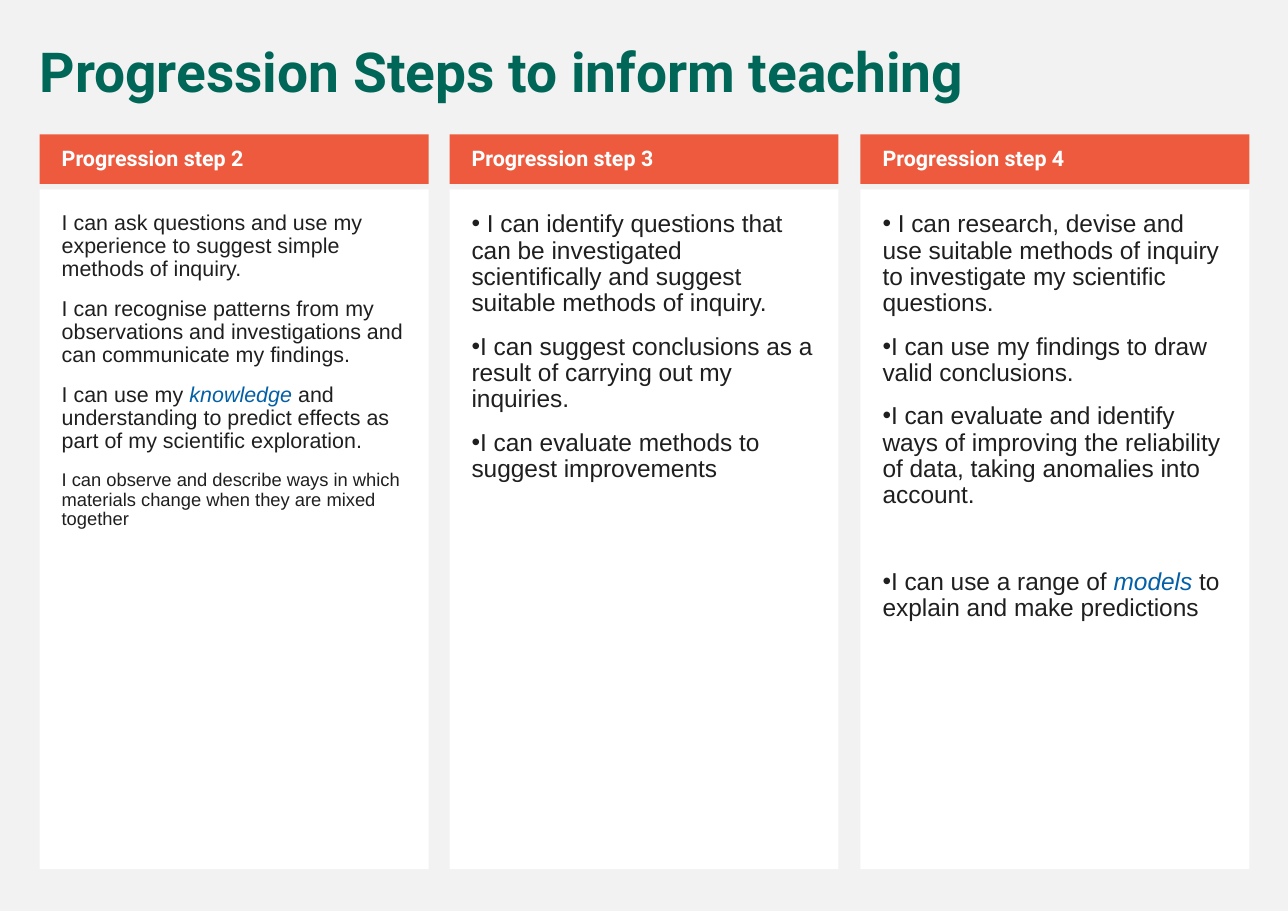
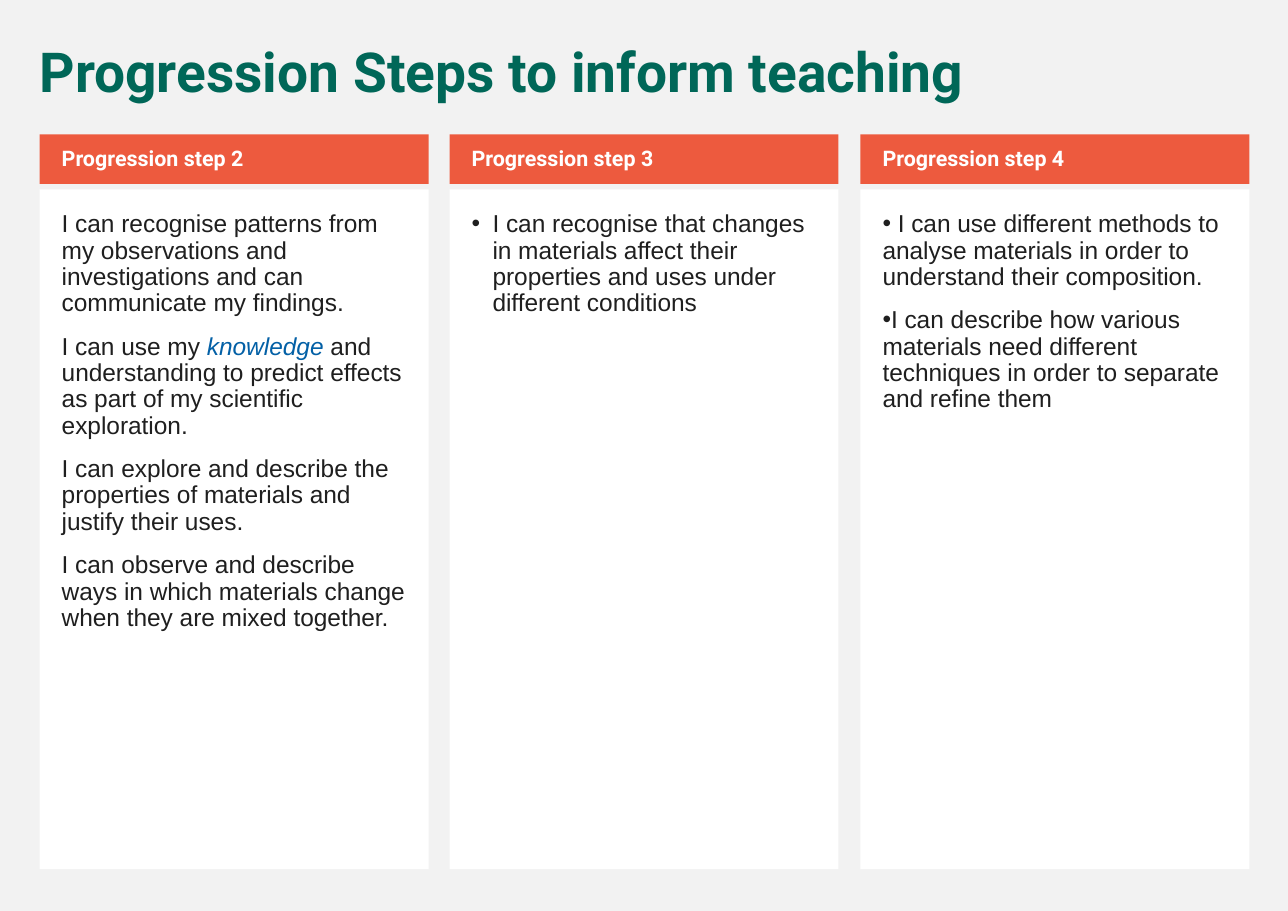
from copy import deepcopy
from dataclasses import dataclass
from functools import partial

from lxml import etree
from pptx import Presentation
from pptx.dml.color import RGBColor
from pptx.enum import text
from pptx.oxml import ns
from pptx.util import Pt

PX = 9144
SLIDE_WIDTH, SLIDE_HEIGHT = 1169, 827
GREY = RGBColor(0xF2, 0xF2, 0xF2)
WHITE = RGBColor(0xFF, 0xFF, 0xFF)
ORANGE = RGBColor(0xED, 0x5A, 0x3E)
GREEN = RGBColor(0x00, 0x67, 0x58)
INK = RGBColor(0x1F, 0x1F, 0x1F)
BLUE = RGBColor(0x03, 0x60, 0xA6)

TITLE = "Progression Steps to inform teaching"
TITLE_BOX = (26, 36, 1108, 65)
COLUMNS_BOX = (36, 122, 1098, 667)
COLUMN_WIDTH = 353
HEADING_HEIGHT = 45
HEADING_GAP = 5
HEADINGS = ("Progression step 2", "Progression step 3", "Progression step 4")


@dataclass
class Point:
    text: str
    size: int = 16
    bullet: bool = True
    hanging: int = 0
    before: int = 11


Plain = partial(Point, bullet=False)

SKILLS = (
    (
        Plain("I can ask questions and use my experience to suggest simple methods of inquiry.", 14),
        Plain("I can recognise patterns from my observations and investigations and can "
              "communicate my findings.", 14),
        Plain("I can use my *knowledge* and understanding to predict effects as part of "
              "my scientific exploration.", 14),
        Plain("I can observe and describe ways in which materials change when they are "
              "mixed together", 12),
    ),
    (
        Point(" I can identify questions that can be investigated scientifically and "
              "suggest suitable methods of inquiry."),
        Point("I can suggest conclusions as a result of carrying out my inquiries."),
        Point("I can evaluate methods to suggest improvements"),
    ),
    (
        Point(" I can research, devise and use suitable methods of inquiry to investigate "
              "my scientific questions."),
        Point("I can use my findings to draw valid conclusions."),
        Point("I can evaluate and identify ways of improving the reliability of data, "
              "taking anomalies into account."),
        Point("I can use a range of *models* to explain and make predictions", before=39),
    ),
)

MATERIALS = (
    (
        Plain("I can recognise patterns from my observations and investigations and can "
              "communicate my findings."),
        Plain("I can use my *knowledge* and understanding to predict effects as part of "
              "my scientific exploration."),
        Plain("I can explore and describe the properties of materials and justify their uses."),
        Plain("I can observe and describe ways in which materials change when they are "
              "mixed together."),
    ),
    (
        Point("I can recognise that changes in materials affect their properties and uses "
              "under different conditions", hanging=19),
    ),
    (
        Point(" I can use different methods to analyse materials in order to understand "
              "their composition."),
        Point("I can describe how various materials need different techniques in order to "
              "separate and refine them"),
    ),
)


def place(shape, box, insets, anchor, fill=None):
    shape.left, shape.top, shape.width, shape.height = (length * PX for length in box)
    frame = shape.text_frame
    frame.margin_left, frame.margin_top, frame.margin_right, frame.margin_bottom = (
        length * PX for length in insets)
    frame.vertical_anchor = anchor
    frame.word_wrap = True
    frame.auto_size = text.MSO_AUTO_SIZE.NONE
    if fill is not None:
        shape.fill.solid()
        shape.fill.fore_color.rgb = fill


def write(paragraph, content, size, font="Arial", color=INK, bold=False,
          before=11, bullet=False, hanging=0):
    paragraph.alignment = text.PP_ALIGN.LEFT
    paragraph.line_spacing = 0.9
    paragraph.space_before = Pt(before)
    paragraph.space_after = Pt(0)
    properties = paragraph._p.get_or_add_pPr()
    properties.set("marL", str(hanging * PX))
    properties.set("indent", str(-hanging * PX))
    marker = etree.SubElement(properties, ns.qn("a:buChar" if bullet else "a:buNone"))
    if bullet:
        marker.set("char", "•")
    for index, part in enumerate(content.split("*")):
        is_term = index % 2 == 1
        run = paragraph.add_run()
        run.text = part
        run.font.name = font
        run.font.size = Pt(size)
        run.font.bold = bold
        run.font.italic = is_term
        run.font.color.rgb = BLUE if is_term else color


def add_title(slide, box):
    title = slide.shapes.title
    place(title, box, (10, 5, 10, 5), text.MSO_ANCHOR.TOP)
    write(title.text_frame.paragraphs[0], TITLE, 36, font="Roboto", color=GREEN, bold=True)


def add_column(heading, body, box, label, points):
    left, top, width, height = box
    place(heading, (left, top, width, HEADING_HEIGHT), (20, 5, 10, 5),
          text.MSO_ANCHOR.MIDDLE, ORANGE)
    write(heading.text_frame.paragraphs[0], label, 14, font="Roboto", color=WHITE, bold=True)
    offset = HEADING_HEIGHT + HEADING_GAP
    place(body, (left, top + offset, width, height - offset), (20, 20, 20, 20),
          text.MSO_ANCHOR.TOP, WHITE)
    frame = body.text_frame
    for index, point in enumerate(points):
        paragraph = frame.add_paragraph() if index else frame.paragraphs[0]
        write(paragraph, point.text, point.size, before=point.before,
              bullet=point.bullet, hanging=point.hanging)


def add_progression_slide(presentation, layout, columns):
    slide = presentation.slides.add_slide(layout)
    add_title(slide, TITLE_BOX)
    placeholders = {shape.placeholder_format.idx: shape for shape in slide.placeholders}
    left, top, width, height = COLUMNS_BOX
    for index, (label, points) in enumerate(zip(HEADINGS, columns)):
        column_left = left + index * (width - COLUMN_WIDTH) // (len(HEADINGS) - 1)
        add_column(placeholders[2 * index + 1], placeholders[2 * index + 2],
                   (column_left, top, COLUMN_WIDTH, height), label, points)


def three_column_layout(presentation):
    layout = presentation.slide_layouts.get_by_name("Comparison")
    for placeholder in list(layout.placeholders):
        index = placeholder.placeholder_format.idx
        if index in (3, 4):
            element = deepcopy(placeholder.element)
            element.xpath(".//p:ph")[0].set("idx", str(index + 2))
            element.xpath(".//p:cNvPr")[0].set("id", str(index + 20))
            placeholder.element.addnext(element)
    return layout


def main():
    presentation = Presentation()
    presentation.slide_width = SLIDE_WIDTH * PX
    presentation.slide_height = SLIDE_HEIGHT * PX
    background = presentation.slide_master.background.fill
    background.solid()
    background.fore_color.rgb = GREY
    layout = three_column_layout(presentation)
    for columns in (SKILLS, MATERIALS):
        add_progression_slide(presentation, layout, columns)
    presentation.save("out.pptx")


if __name__ == "__main__":
    main()
